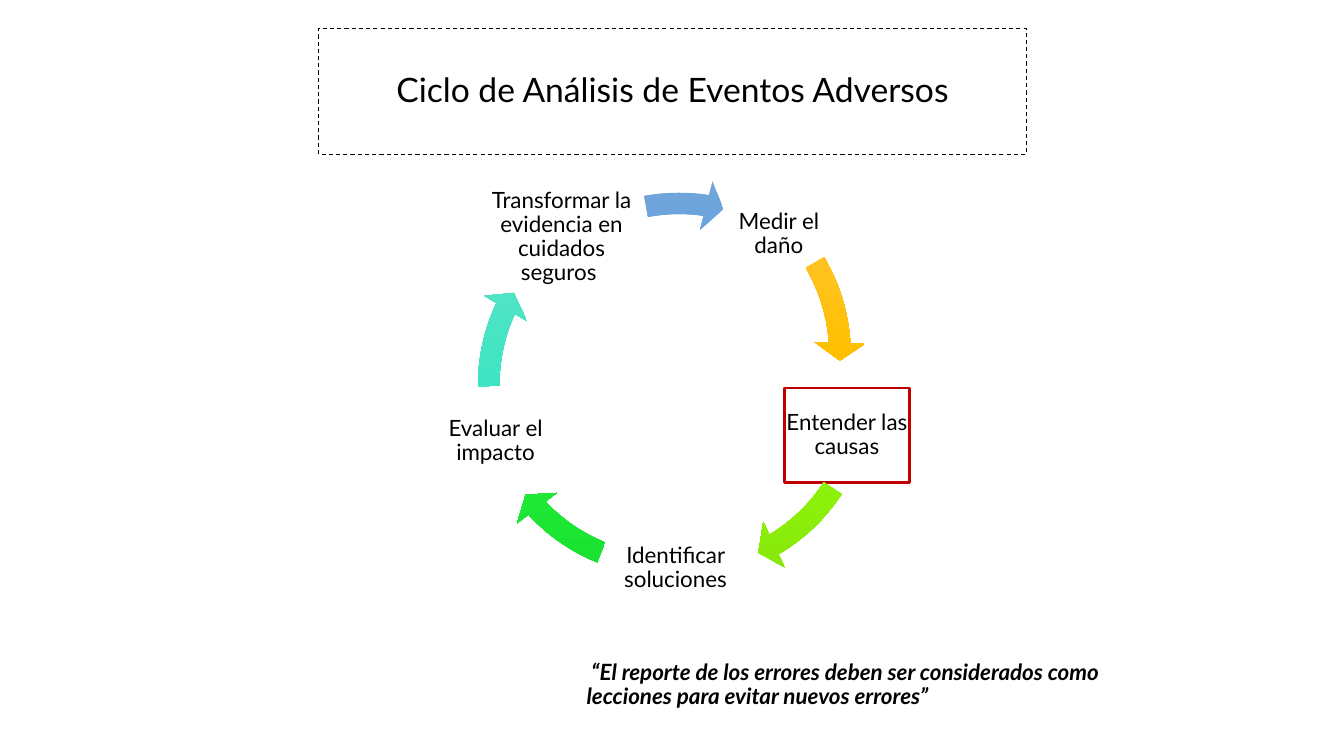
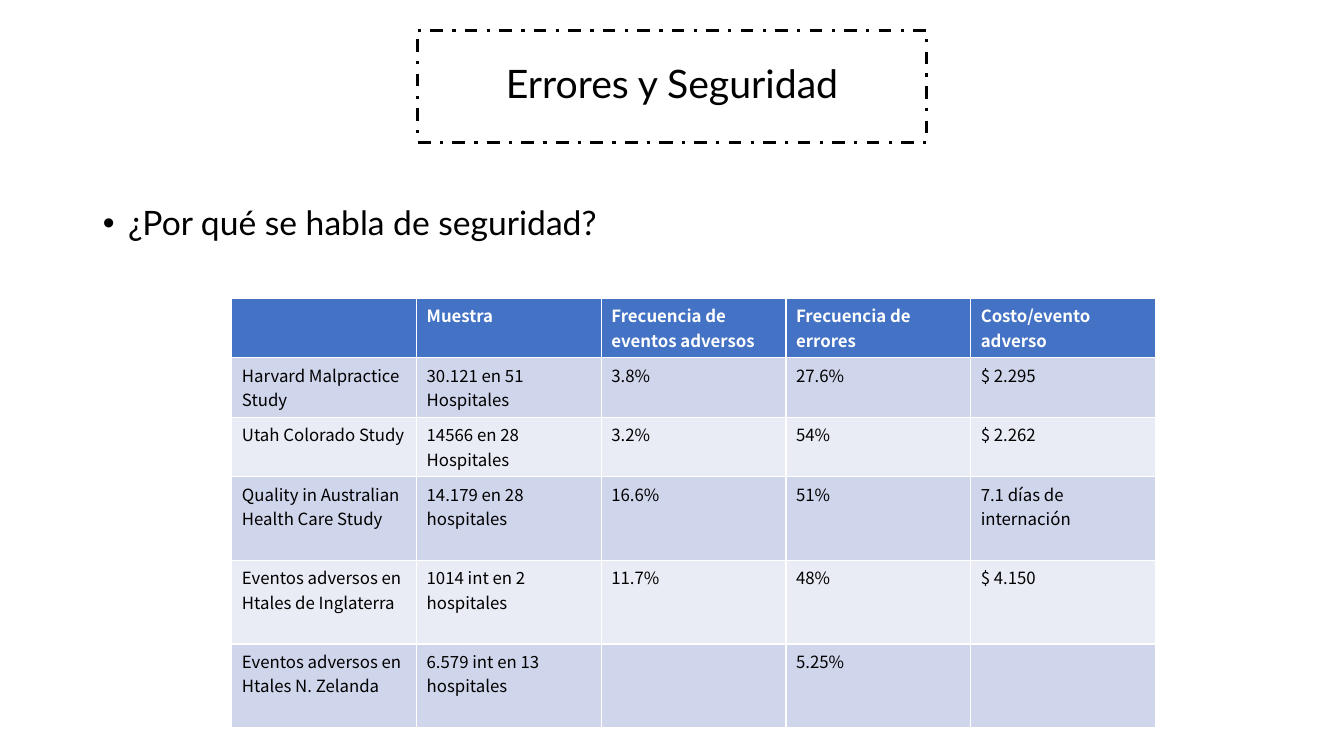
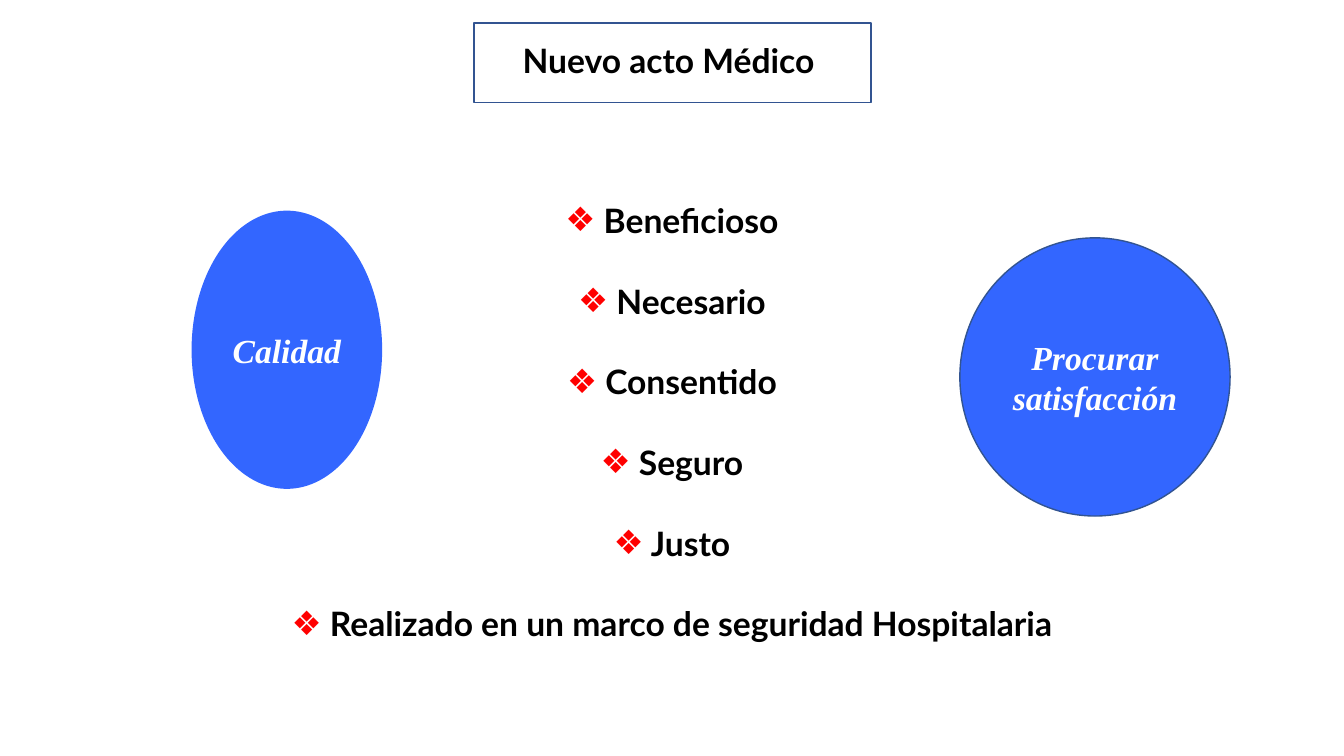
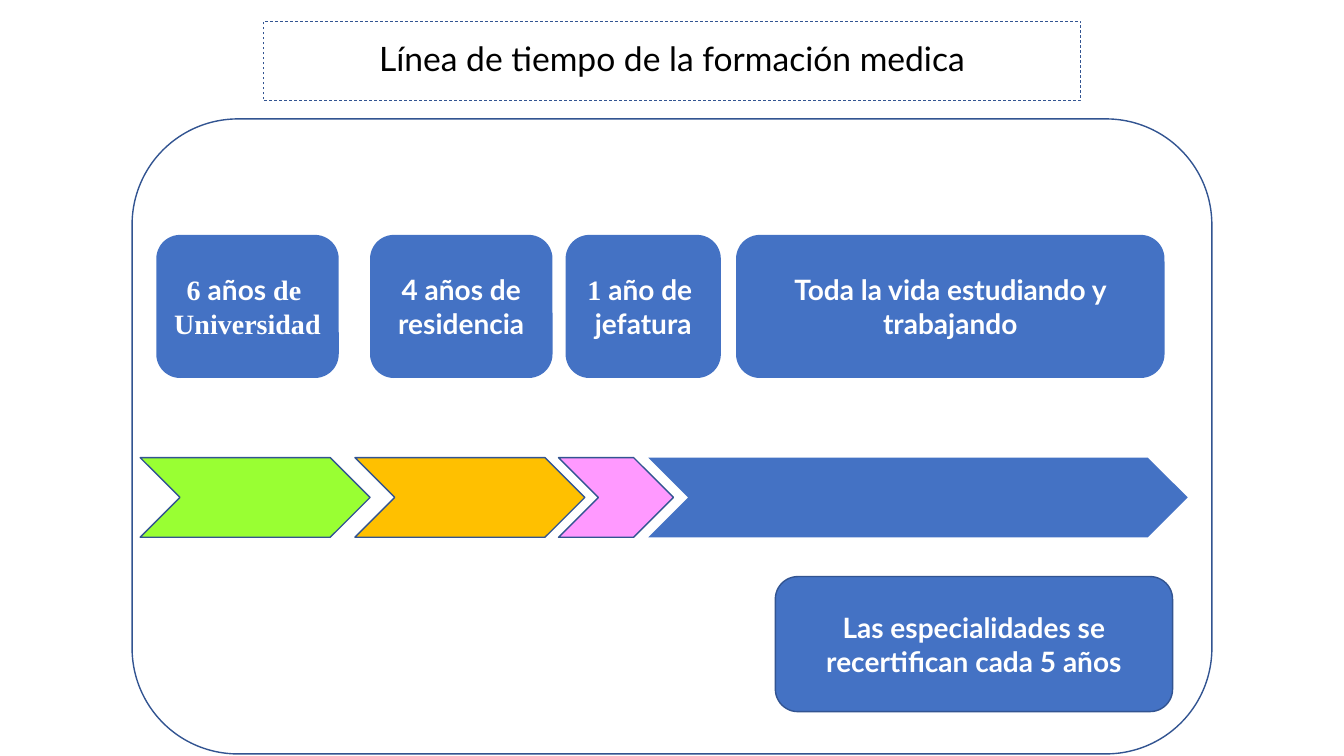
import copy

from lxml import etree
from pptx import Presentation
from pptx.dml.color import RGBColor
from pptx.enum import dml, shapes, text
from pptx.oxml.ns import qn
from pptx.util import Inches, Pt

BLACK = RGBColor(0x00, 0x00, 0x00)
WHITE = RGBColor(0xFF, 0xFF, 0xFF)
RED = RGBColor(0xFF, 0x00, 0x00)
DARK_RED = RGBColor(0xC0, 0x00, 0x00)
BLUE = RGBColor(0x44, 0x72, 0xC4)
NAVY = RGBColor(0x32, 0x54, 0x91)
BRIGHT_BLUE = RGBColor(0x33, 0x66, 0xFF)
LIME = RGBColor(0x99, 0xFF, 0x33)
AMBER = RGBColor(0xFF, 0xC0, 0x00)
PINK = RGBColor(0xFF, 0x99, 0xFF)
BANDS = (RGBColor(0xCF, 0xD5, 0xEA), RGBColor(0xE9, 0xEB, 0xF5))

SANS = "Lato"
SERIF = "Times New Roman"
TABLE_FONT = "Noto Sans CJK KR"
CENTER = text.PP_ALIGN.CENTER
SHAPE = shapes.MSO_SHAPE
DASH = dml.MSO_LINE

TITLE_ONLY, TITLE_AND_BODY = 5, 1

# Left, top, end angle, start angle, gradient colours from top to bottom
ARROWS = (
    (4.51, 1.48, 356.43, 329.43, ("FFC64B", "FFC000", "E3AB00")),
    (4.73, 1.83, 59.34, 33.24, ("A0F74E", "96FE0E", "85E509")),
    (4.60, 1.79, 137.10, 112.11, ("56EC62", "27F13E", "18E02F")),
    (4.60, 1.78, 204.96, 179.52, ("63E3C6", "3FE5C3", "2FD4B2")),
    (4.70, 1.77, 278.69, 259.45, ("71A6DB", "559BDB", "448ACA")),
)
STEPS = (
    ("Medir el daño", (7.18, 1.78, 1.09, 1.09)),
    ("Entender las causas", (7.78, 3.85, 1.24, 0.94)),
    ("Identificar soluciones", (5.96, 5.09, 1.48, 1.09)),
    ("Evaluar el impacto", (4.37, 3.83, 1.09, 1.09)),
    ("Transformar la evidencia en cuidados seguros ", (4.74, 1.81, 1.66, 1.09)),
)
CURRENT_STEP = "Entender las causas"

STUDIES = (
    ("", "Muestra", "Frecuencia de eventos adversos", "Frecuencia de errores",
     "Costo/evento adverso"),
    ("Harvard Malpractice Study", "30.121 en 51 Hospitales", "3.8%", "27.6%", "$ 2.295"),
    ("Utah Colorado Study", "14566 en 28 Hospitales", "3.2%", "54%", "$ 2.262"),
    ("Quality in Australian Health Care Study", "14.179 en 28 hospitales", "16.6%", "51%",
     "7.1 días de internación"),
    ("Eventos adversos en Htales de Inglaterra", "1014 int en 2 hospitales", "11.7%", "48%",
     "$ 4.150"),
    ("Eventos adversos en Htales N. Zelanda", "6.579 int en 13 hospitales", "", "5.25%", ""),
)
ROW_HEIGHTS = (0.59, 0.59, 0.59, 0.83, 0.83, 0.83)

QUALITIES = ("Beneficioso", "Necesario", "Consentido", "Seguro", "Justo",
             "Realizado en un marco de seguridad Hospitalaria")

CHEVRONS = ((1.39, 2.28, LIME, NAVY), (3.52, 2.28, AMBER, NAVY),
            (5.54, 1.14, PINK, NAVY), (6.43, 5.35, BLUE, None))
# Left, width, paragraphs made of (text, font) spans
STAGES = (
    (1.55, 1.81, ([("6 ", SERIF), ("años", SANS), (" de ", SERIF)], [("Universidad", SERIF)])),
    (3.67, 1.81, ("4 años de", "residencia")),
    (5.61, 1.54, ([("1 ", SERIF), ("año de ", SANS)], "jefatura")),
    (7.30, 4.25, ("Toda la vida estudiando y trabajando",)),
)


def place(item, area):
    item.left, item.top, item.width, item.height = map(Inches, area)


def outline(item, color, width=1.0, dash=None):
    if color is None:
        item.line.fill.background()
        return
    item.line.color.rgb = color
    item.line.width = Pt(width)
    if dash:
        item.line.dash_style = dash


def write(frame, paragraphs, size, color=BLACK, font=SANS, bold=False, italic=False,
          align=CENTER, spacing=1.0):
    """Fill a text frame; a paragraph is a string or a list of (text, font) spans."""
    frame.word_wrap = True
    for index, spans in enumerate(paragraphs):
        para = frame.paragraphs[0] if index == 0 else frame.add_paragraph()
        para.alignment = align
        para.line_spacing = spacing
        para.space_before = Pt(0)
        for words, name in [(spans, font)] if isinstance(spans, str) else spans:
            span = para.add_run()
            span.text = words
            span.font.name, span.font.size = name, Pt(size)
            span.font.bold, span.font.italic = bold, italic
            span.font.color.rgb = color


def add_bullet(para, char, indent=0.0, color=None):
    props = para._p.get_or_add_pPr()
    props.set("marL", str(Inches(indent)))
    props.set("indent", str(-Inches(indent)))
    if color is not None:
        holder = etree.SubElement(props, qn("a:buClr"))
        etree.SubElement(holder, qn("a:srgbClr"), val=str(color))
    etree.SubElement(props, qn("a:buFont"), typeface="Arial")
    etree.SubElement(props, qn("a:buChar"), char=char)


def add_figure(page, kind, area, fill=None, line=None, width=1.0):
    figure = page.shapes.add_shape(kind, *map(Inches, area))
    figure.shadow.inherit = False
    if fill is None:
        figure.fill.background()
    else:
        figure.fill.solid()
        figure.fill.fore_color.rgb = fill
    outline(figure, line, width)
    figure.text_frame.vertical_anchor = text.MSO_ANCHOR.MIDDLE
    return figure


def set_title(page, words, area, size=24, geometry="rect", line=BLACK, width=0.75,
              dash=None, bold=False):
    title = page.shapes.title
    place(title, area)
    outlined = etree.SubElement(title._element.spPr, qn("a:prstGeom"), prst=geometry)
    etree.SubElement(outlined, qn("a:avLst"))
    outline(title, line, width, dash)
    title.text_frame.auto_size = text.MSO_AUTO_SIZE.NONE
    title.text_frame.vertical_anchor = text.MSO_ANCHOR.MIDDLE
    write(title.text_frame, [words], size, bold=bold, spacing=0.9)


def get_body(page, area, anchor):
    body = page.placeholders[1]
    place(body, area)
    body.text_frame.auto_size = text.MSO_AUTO_SIZE.NONE
    body.text_frame.vertical_anchor = anchor
    return body.text_frame


def add_cycle_arrow(page, left, top, end, start, colors):
    arrow = add_figure(page, SHAPE.CIRCULAR_ARROW, (left, top, 4.07, 4.07))
    # Angles are stored in 60000ths of a degree, adjustments in 100000ths
    for index, value in enumerate((0.052, 5.6 * 0.6, end * 0.6, start * 0.6, 0.061)):
        arrow.adjustments[index] = value
    arrow.fill.gradient()
    arrow.fill.gradient_angle = 270
    stops = arrow._element.spPr.find(".//" + qn("a:gsLst"))
    stops.append(copy.deepcopy(stops[0]))
    for stop, position, color in zip(arrow.fill.gradient_stops, (0, 0.5, 1), colors):
        stop.position = position
        stop.color.rgb = RGBColor.from_string(color)


def add_step(page, words, area):
    line = DARK_RED if words == CURRENT_STEP else None
    step = add_figure(page, SHAPE.RECTANGLE, area, line=line, width=2)
    frame = step.text_frame
    frame.margin_left = frame.margin_right = Inches(0.02)
    frame.margin_top = frame.margin_bottom = Inches(0.02)
    write(frame, [words], 16, spacing=0.9)


def add_study_table(page):
    rows, columns = len(STUDIES), len(STUDIES[0])
    frame = page.shapes.add_table(rows, columns, Inches(2.3), Inches(2.96),
                                  Inches(9.16), Inches(sum(ROW_HEIGHTS)))
    table = frame.table
    for row, (height, values) in enumerate(zip(ROW_HEIGHTS, STUDIES)):
        table.rows[row].height = Inches(height)
        header = row == 0
        for column, value in enumerate(values):
            cell = table.cell(row, column)
            cell.fill.solid()
            cell.fill.fore_color.rgb = BLUE if header else BANDS[(row - 1) % 2]
            if value:
                write(cell.text_frame, [value], 12, WHITE if header else BLACK,
                      TABLE_FONT, bold=header, align=text.PP_ALIGN.LEFT)


def build_cycle(page):
    set_title(page, "Ciclo de Análisis de Eventos Adversos", (3.16, 0.28, 7.02, 1.25),
              dash=DASH.DASH)
    for step in STEPS:
        add_step(page, *step)
    for arrow in ARROWS:
        add_cycle_arrow(page, *arrow)
    quote = page.shapes.add_textbox(*map(Inches, (5.72, 6.51, 5.94, 0.59)))
    write(quote.text_frame,
          [" “El reporte de los errores deben ser considerados como lecciones "
           "para evitar nuevos errores”"],
          16, bold=True, italic=True, align=text.PP_ALIGN.LEFT, spacing=0.9)


def build_studies(page):
    set_title(page, "Errores y Seguridad", (4.14, 0.3, 5.05, 1.11), size=28, width=2.25,
              dash=DASH.DASH_DOT)
    frame = get_body(page, (0.92, 2, 11.5, 4.76), text.MSO_ANCHOR.TOP)
    write(frame, ["¿Por qué se habla de seguridad?"], 24, align=text.PP_ALIGN.LEFT,
          spacing=0.9)
    add_bullet(frame.paragraphs[0], "•", indent=0.25)
    add_study_table(page)


def build_medical_act(page):
    frame = get_body(page, (1.82, 1.27, 9.69, 5.83), text.MSO_ANCHOR.MIDDLE)
    write(frame, [" " + quality for quality in QUALITIES], 24, bold=True)
    for index, para in enumerate(frame.paragraphs):
        para.space_before = Pt(28.8 if index else 0)
        add_bullet(para, "❖", color=RED)
    set_title(page, "Nuevo acto Médico ", (4.7, 0.23, 3.94, 0.79), geometry="roundRect",
              line=NAVY, width=1, bold=True)
    for words, area, line in ((["Calidad"], (1.9, 2.09, 1.89, 2.76), None),
                              (["Procurar", "satisfacción"], (9.52, 2.36, 2.68, 2.76), NAVY)):
        goal = add_figure(page, SHAPE.OVAL, area, BRIGHT_BLUE, line)
        write(goal.text_frame, words, 24, WHITE, SERIF, bold=True, italic=True)


def add_card(page, area, paragraphs, line=None):
    card = add_figure(page, SHAPE.ROUNDED_RECTANGLE, area, BLUE, line)
    write(card.text_frame, paragraphs, 20, WHITE, bold=True)


def build_timeline(page):
    add_figure(page, SHAPE.ROUNDED_RECTANGLE, (1.31, 1.18, 10.71, 6.3), line=NAVY)
    set_title(page, "Línea de tiempo de la formación medica", (2.61, 0.21, 8.11, 0.79),
              geometry="roundRect", line=NAVY, width=0.5, dash=DASH.DASH)
    for left, width, fill, line in CHEVRONS:
        add_figure(page, SHAPE.CHEVRON, (left, 4.54, width, 0.79), fill, line)
    for left, width, paragraphs in STAGES:
        add_card(page, (left, 2.33, width, 1.42), paragraphs)
    add_card(page, (7.69, 5.72, 3.94, 1.34),
             ["Las especialidades se recertifican cada 5 años"], NAVY)


def main():
    deck = Presentation()
    deck.slide_width, deck.slide_height = Inches(13.33), Inches(7.5)
    for build, layout in ((build_cycle, TITLE_ONLY), (build_studies, TITLE_AND_BODY),
                          (build_medical_act, TITLE_AND_BODY), (build_timeline, TITLE_ONLY)):
        build(deck.slides.add_slide(deck.slide_layouts[layout]))
    deck.save("out.pptx")


if __name__ == "__main__":
    main()
